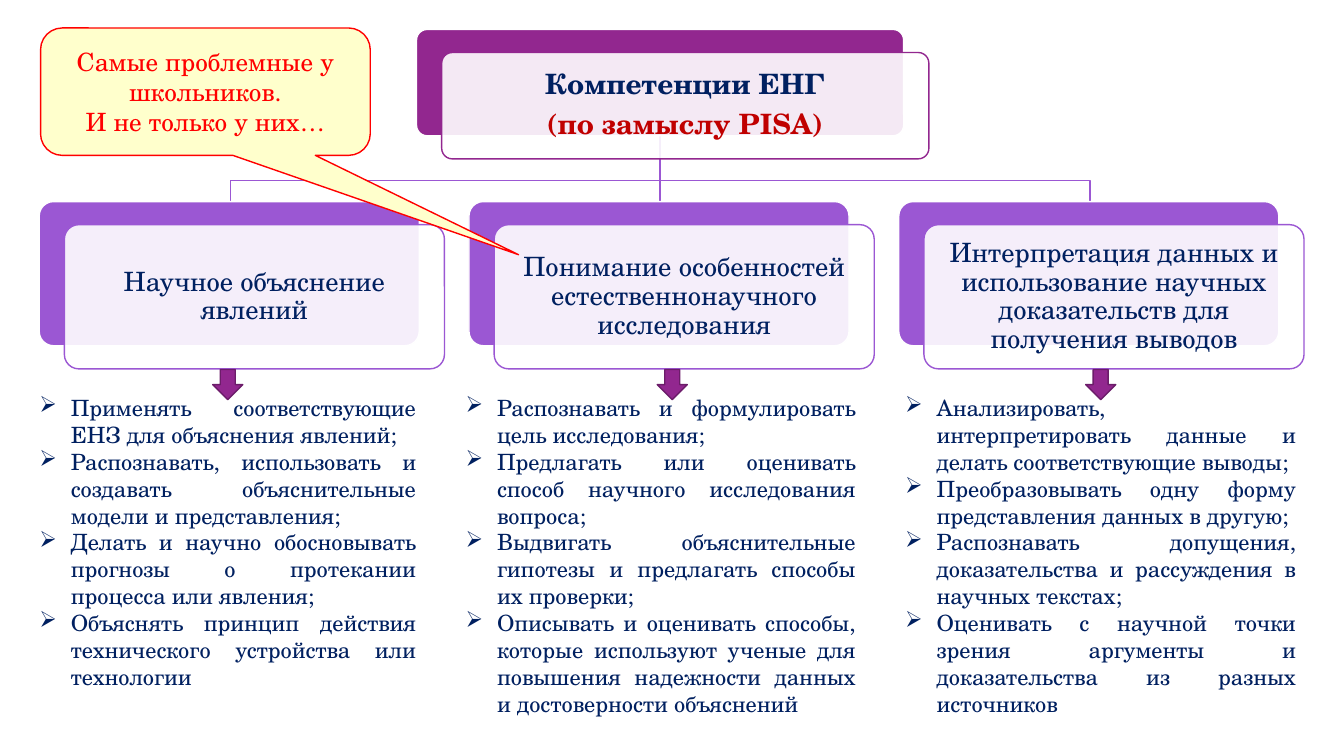
from lxml import etree
from pptx import Presentation
from pptx.dml.color import RGBColor
from pptx.enum import shapes, text
from pptx.oxml import ns
from pptx.util import Pt

NAVY, RED, DARK_RED = "002060", "FF0000", "C00000"
PLUM, VIOLET, WHITE = "92278F", "9B57D3", "FFFFFF"

ROOT_LEFT, ROOT_TOP, ROOT_WIDTH, ROOT_HEIGHT = 297.5, 21, 348, 76
CARD_LEFT, CARD_TOP, CARD_WIDTH, CARD_HEIGHT = 28, 144, 271.5, 103
CARD_PITCH = 307
PLATE_SHIFT_X, PLATE_SHIFT_Y = 18, 16.5
BAR_Y = 129
BULLET_INDENT = 22.5

# Heading, arrow left, list left, list width, list items
COMPETENCIES = [
    ("Научное объяснение явлений", 152, 21, 283.5, [
        "Применять соответствующие ЕНЗ для объяснения явлений;",
        "Распознавать, использовать и создавать объяснительные модели и представления;",
        "Делать и научно обосновывать прогнозы о протекании процесса или явления;",
        "Объяснять принцип действия технического устройства или технологии",
    ]),
    ("Понимание особенностей естественнонаучного исследования", 469.5, 325.5, 293, [
        "Распознавать и формулировать цель исследования;",
        "Предлагать или оценивать способ научного исследования вопроса;",
        "Выдвигать объяснительные гипотезы и предлагать способы их проверки;",
        "Описывать и оценивать способы, которые используют ученые для повышения "
        "надежности данных и достоверности объяснений",
    ]),
    ("Интерпретация данных и использование научных доказательств для получения выводов",
     775.5, 639.5, 293.5, [
        "Анализировать, интерпретировать данные и делать соответствующие выводы;",
        "Преобразовывать одну форму представления данных в другую;",
        "Распознавать допущения, доказательства и рассуждения в научных текстах;",
        "Оценивать с научной точки зрения аргументы и доказательства из разных источников",
    ]),
]


def color(hex_string):
    return RGBColor.from_string(hex_string)


def write(frame, lines, size=18, fill=NAVY, bold=False, align="CENTER",
          spacing=1.0, after=0, anchor="MIDDLE", inset=None, bullet=None):
    """Fill a text frame with one paragraph per line; fill may be a list of colours."""
    frame.word_wrap = True
    frame.vertical_anchor = text.MSO_ANCHOR[anchor]
    if inset is not None:
        frame.margin_left = frame.margin_right = Pt(inset)
        frame.margin_top = frame.margin_bottom = Pt(inset)
    fills = [fill] * len(lines) if isinstance(fill, str) else fill
    for index, line in enumerate(lines):
        paragraph = frame.add_paragraph() if index else frame.paragraphs[0]
        paragraph.alignment = text.PP_ALIGN[align]
        paragraph.line_spacing = spacing
        paragraph.space_before, paragraph.space_after = Pt(0), Pt(after)
        run = paragraph.add_run()
        run.text = line
        run.font.name, run.font.size, run.font.bold = "TeX Gyre Schola", Pt(size), bold
        run.font.color.rgb = color(fills[index])
        if bullet:
            properties = paragraph._p.get_or_add_pPr()
            properties.set("marL", str(Pt(BULLET_INDENT)))
            properties.set("indent", str(-Pt(BULLET_INDENT)))
            etree.SubElement(properties, ns.qn("a:buChar"), char=bullet)


class SlideBuilder:
    def __init__(self, slide):
        self.slide = slide

    def outline(self, shape, line):
        shape.line.color.rgb = color(line)
        shape.line.width = Pt(1)

    def shape(self, kind, left, top, width, height, fill, line, adjustments=(), alpha=None):
        shape = self.slide.shapes.add_shape(
            shapes.MSO_SHAPE[kind], Pt(left), Pt(top), Pt(width), Pt(height))
        shape.shadow.inherit = False
        shape.fill.solid()
        shape.fill.fore_color.rgb = color(fill)
        self.outline(shape, line)
        for index, value in enumerate(adjustments):
            shape.adjustments[index] = value
        if alpha is not None:
            fill_color = shape.element.spPr.find(ns.qn("a:solidFill"))[0]
            etree.SubElement(fill_color, ns.qn("a:alpha"), val=str(alpha * 1000))
        return shape

    def card(self, left, top, width, height, fill):
        """Draw a coloured card with a translucent plate shifted over it; return the plate."""
        self.shape("ROUNDED_RECTANGLE", left, top, width, height, fill, WHITE, [0.1])
        return self.shape("ROUNDED_RECTANGLE", left + PLATE_SHIFT_X, top + PLATE_SHIFT_Y,
                          width, height, WHITE, fill, [0.1], alpha=90)

    def straight(self, x, top, bottom, line):
        connector = self.slide.shapes.add_connector(
            shapes.MSO_CONNECTOR.STRAIGHT, Pt(x), Pt(top), Pt(x), Pt(bottom))
        self.outline(connector, line)
        etree.SubElement(connector.element.spPr, ns.qn("a:effectLst"))

    def branch(self, points, line):
        start, *rest = [(Pt(x), Pt(y)) for x, y in points]
        builder = self.slide.shapes.build_freeform(*start)
        builder.add_line_segments(rest, close=False)
        shape = builder.convert_to_shape()
        shape.shadow.inherit = False
        shape.fill.background()
        self.outline(shape, line)

    def title(self, lines, left, top, width, height, **style):
        """Place the title placeholder in front of everything drawn so far."""
        title = self.slide.shapes.title
        title.left, title.top = Pt(left), Pt(top)
        title.width, title.height = Pt(width), Pt(height)
        title.text_frame.auto_size = text.MSO_AUTO_SIZE.NONE
        write(title.text_frame, lines, **style)
        title.element.getparent().append(title.element)

    def bullets(self, items, left, top, width, height):
        box = self.slide.shapes.add_textbox(Pt(left), Pt(top), Pt(width), Pt(height))
        write(box.text_frame, items, size=16, align="JUSTIFY", anchor="TOP", bullet="➢")
        box.text_frame.auto_size = text.MSO_AUTO_SIZE.SHAPE_TO_FIT_TEXT


def main():
    presentation = Presentation()
    presentation.slide_width, presentation.slide_height = Pt(960), Pt(540)
    builder = SlideBuilder(presentation.slides.add_slide(presentation.slide_layouts[5]))

    root_x = ROOT_LEFT + ROOT_WIDTH / 2
    root_bottom = ROOT_TOP + ROOT_HEIGHT
    for side in (1, -1):
        end_x = root_x + side * CARD_PITCH
        builder.branch([(root_x, root_bottom), (root_x, BAR_Y),
                        (end_x, BAR_Y), (end_x, CARD_TOP)], VIOLET)
    builder.straight(root_x, root_bottom, CARD_TOP, VIOLET)

    builder.card(ROOT_LEFT, ROOT_TOP, ROOT_WIDTH, ROOT_HEIGHT, PLUM)
    builder.title(["Компетенции ЕНГ", "(по замыслу PISA)"], 317.5, 39.5, 343.5, 71,
                  size=20, fill=[NAVY, DARK_RED], bold=True, spacing=0.9, after=7, inset=6)

    for column, (heading, arrow_left, list_left, list_width, items) in enumerate(COMPETENCIES):
        plate = builder.card(CARD_LEFT + column * CARD_PITCH, CARD_TOP,
                             CARD_WIDTH, CARD_HEIGHT, VIOLET)
        write(plate.text_frame, [heading], size=19, spacing=0.9, inset=8.5)
        builder.bullets(items, list_left, 278, list_width, 240)
        builder.shape("DOWN_ARROW", arrow_left, 264, 21.5, 21.5, PLUM, "6C1D6A")

    callout = builder.shape("ROUNDED_RECTANGULAR_CALLOUT", 29, 20, 235.5, 91,
                            "FFFFCC", RED, [0.95, 1.28, 0.17])
    write(callout.text_frame, ["Самые проблемные у школьников.", "И не только у них…"], fill=RED)

    presentation.save("out.pptx")


if __name__ == "__main__":
    main()
